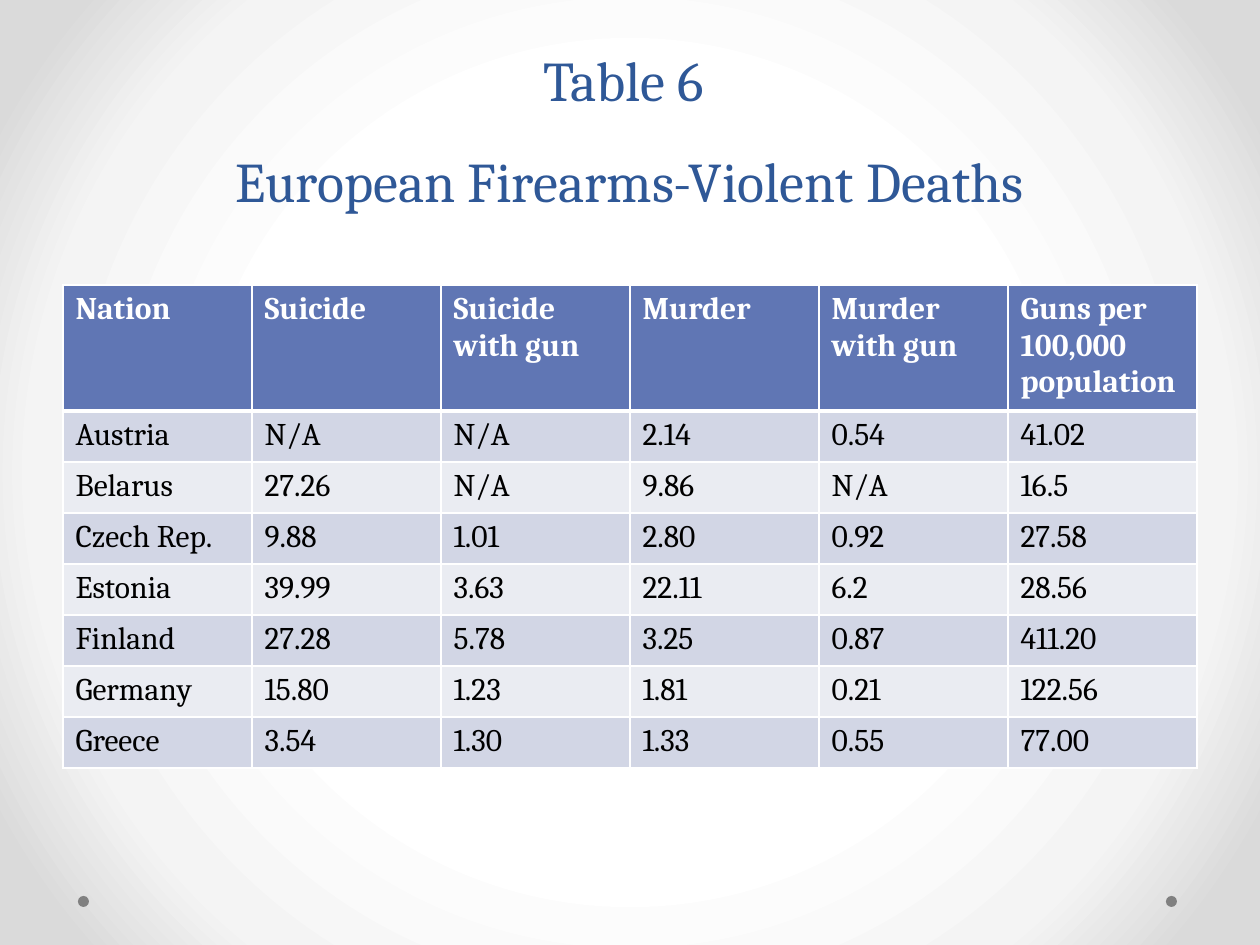
from dataclasses import dataclass

from lxml import etree
from pptx import Presentation
from pptx import util as u
from pptx.dml.color import RGBColor
from pptx.enum import shapes, text
from pptx.oxml import ns


@dataclass(frozen=True)
class Theme:
    """Colours, font and type sizes of the deck."""
    font: str = "Cambria"
    title: str = "2F5897"
    head: str = "6076B4"
    bands: tuple = ("D2D6E5", "EAECF2")
    white: str = "FFFFFF"
    ink: str = "000000"
    dot: str = "808080"
    glow: tuple = ((50, "FFFFFF"), (76, "F4F4F4"), (92, "DADADA"))
    big: int = 32
    lead: int = 58
    body: int = 18


THEME = Theme()
ROWS = [
    ("Nation", "Suicide", "Suicide with gun", "Murder", "Murder with gun",
     "Guns per 100,000 population"),
    ("Austria", "N/A", "N/A", "2.14", "0.54", "41.02"),
    ("Belarus", "27.26", "N/A", "9.86", "N/A", "16.5"),
    ("Czech Rep.", "9.88", "1.01", "2.80", "0.92", "27.58"),
    ("Estonia", "39.99", "3.63", "22.11", "6.2", "28.56"),
    ("Finland", "27.28", "5.78", "3.25", "0.87", "411.20"),
    ("Germany", "15.80", "1.23", "1.81", "0.21", "122.56"),
    ("Greece", "3.54", "1.30", "1.33", "0.55", "77.00"),
]


def px(n):
    """Turn pixels into EMU."""
    return u.Emu(n * 914400 // 126)


def rgb(code):
    """Turn a hex code into a colour."""
    return RGBColor.from_string(code)


def style(para, size, color, bold=False):
    """Format every run of a paragraph."""
    for run in para.runs:
        font = run.font
        font.name, font.size, font.bold = THEME.font, u.Pt(size), bold
        font.color.rgb = rgb(color)


def glow(slide):
    """Fill the background with a round gradient."""
    slide.background.fill.gradient()
    grad = slide.element.find(".//" + ns.qn("a:gradFill"))
    for child in list(grad):
        grad.remove(child)
    stops = etree.SubElement(grad, ns.qn("a:gsLst"))
    for pos, color in THEME.glow:
        stop = etree.SubElement(stops, ns.qn("a:gs"), pos=str(pos * 1000))
        etree.SubElement(stop, ns.qn("a:srgbClr"), val=color)
    ring = etree.SubElement(grad, ns.qn("a:path"), path="circle")
    sides = dict.fromkeys("ltrb", "50000")
    etree.SubElement(ring, ns.qn("a:fillToRect"), **sides)


def dots(slide, box):
    """Place a dot at each end of the box."""
    left, top, width, size = box
    for x in (left, left + width - size):
        dot = slide.shapes.add_shape(
            shapes.MSO_SHAPE.OVAL, px(x), px(top), px(size), px(size))
        dot.shadow.inherit = False
        dot.fill.solid()
        dot.fill.fore_color.rgb = rgb(THEME.dot)
        dot.line.fill.background()


def title(slide, box, words):
    """Place the centred title at the foot of the box."""
    frame = slide.shapes.add_textbox(*map(px, box)).text_frame
    frame.word_wrap = True
    frame.vertical_anchor = text.MSO_ANCHOR.BOTTOM
    para = frame.paragraphs[0]
    para.text = words
    para.alignment = text.PP_ALIGN.CENTER
    para.line_spacing = u.Pt(THEME.lead)
    style(para, THEME.big, THEME.title)


def edge(cell, side, width):
    """Draw one white border of a cell."""
    props = cell._tc.get_or_add_tcPr()
    line = etree.SubElement(props, ns.qn("a:ln" + side), w=str(u.Pt(width)))
    fill = etree.SubElement(line, ns.qn("a:solidFill"))
    etree.SubElement(fill, ns.qn("a:srgbClr"), val=THEME.white)


def table(slide, box, rows, head):
    """Place a banded table with a header row of the given height."""
    height = box[3]
    grid = slide.shapes.add_table(len(rows), len(rows[0]), *map(px, box)).table
    step = (height - head) // (len(rows) - 1)
    for r, row in enumerate(rows):
        grid.rows[r].height = px(step if r else head)
        fill = THEME.bands[(r - 1) % 2] if r else THEME.head
        for c, words in enumerate(row):
            cell = grid.cell(r, c)
            for side in "LRTB":
                thick = (r, side) in ((0, "B"), (1, "T"))
                edge(cell, side, 3 if thick else 1)
            cell.fill.solid()
            cell.fill.fore_color.rgb = rgb(fill)
            cell.text = words
            style(cell.text_frame.paragraphs[0], THEME.body,
                  THEME.ink if r else THEME.white, r == 0)


def main():
    """Build and save the slide."""
    deck = Presentation()
    deck.slide_width, deck.slide_height = px(1260), px(945)
    slide = deck.slides.add_slide(deck.slide_layouts[6])
    glow(slide)
    dots(slide, (78, 896, 1099, 11))
    title(slide, (63, 0, 1134, 220), "Table 6 \vEuropean Firearms-Violent Deaths")
    table(slide, (63, 285, 1134, 478), ROWS, 121)
    deck.save("out.pptx")


if __name__ == "__main__":
    main()
